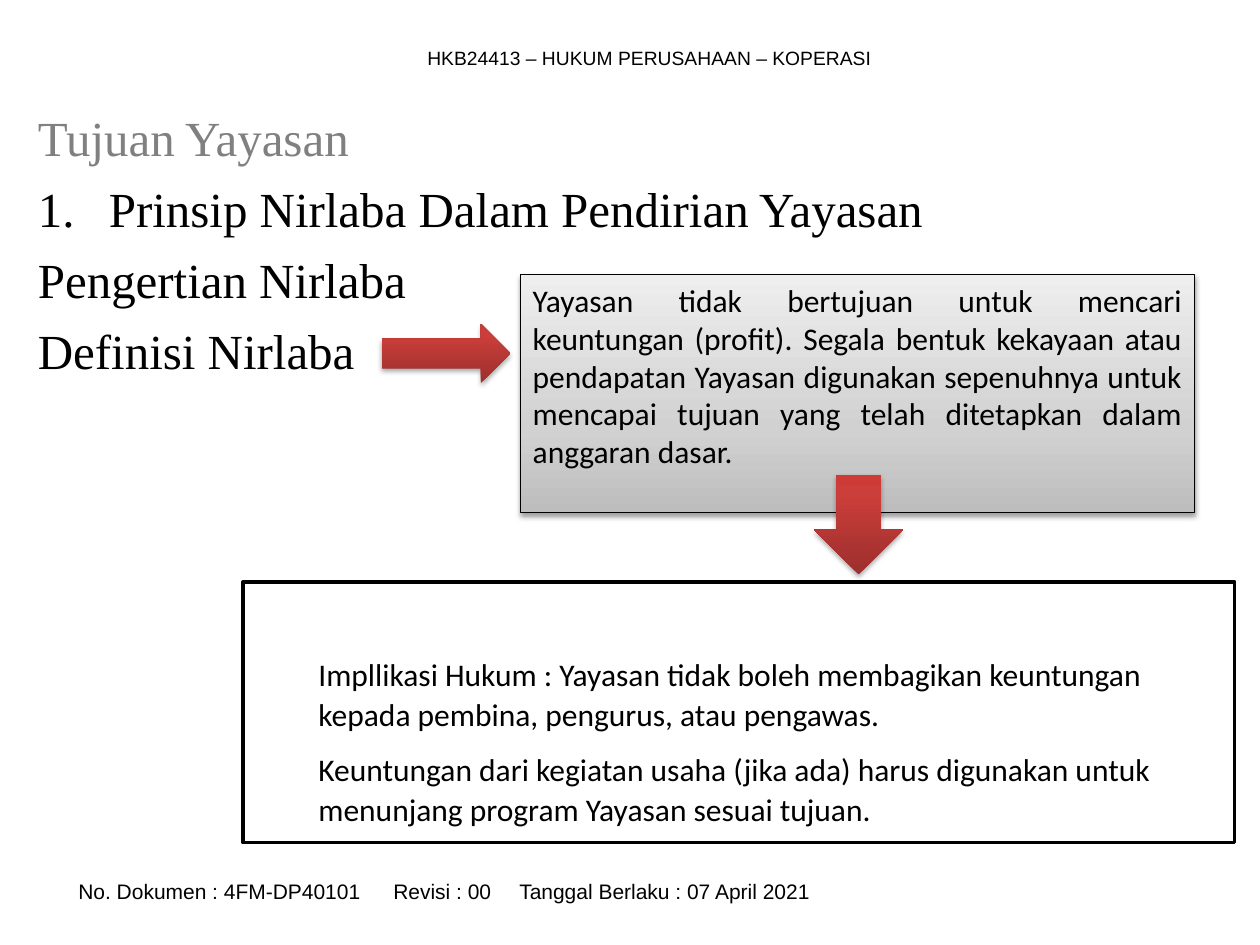
"""Build the slide on the non-profit principle of a foundation (Yayasan)."""
from lxml import etree
from pptx import Presentation
from pptx import util as u
from pptx.dml.color import RGBColor
from pptx.enum import shapes, text
from pptx.oxml.ns import qn

BLACK = RGBColor(0x00, 0x00, 0x00)
WHITE = RGBColor(0xFF, 0xFF, 0xFF)
GREY = RGBColor(0x80, 0x80, 0x80)
RED_STOPS = [
    (0, RGBColor(0x9C, 0x2F, 0x2D)),
    (80, RGBColor(0xCB, 0x3E, 0x3A)),
    (100, RGBColor(0xCE, 0x3B, 0x37)),
]
SILVER_STOPS = [
    (0, RGBColor(0xBD, 0xBD, 0xBD)),
    (35, RGBColor(0xD1, 0xD1, 0xD1)),
    (100, RGBColor(0xEE, 0xEE, 0xEE)),
]
LEFT, CENTER, JUSTIFY = text.PP_ALIGN.LEFT, text.PP_ALIGN.CENTER, text.PP_ALIGN.JUSTIFY
SHAPE = shapes.MSO_SHAPE


def add_text(frame, words, size=18, font="Calibri", color=BLACK, align=JUSTIFY,
             before=0, after=0, spacing=1.0, margin=0, indent=0, numbered=False, tabs=()):
    paragraph = frame.paragraphs[0]
    if paragraph.runs:
        paragraph = frame.add_paragraph()
    properties = paragraph._p.get_or_add_pPr()
    properties.set("marL", str(u.Cm(margin)))
    properties.set("indent", str(u.Cm(indent)))
    if numbered:
        etree.SubElement(properties, qn("a:buFont"), typeface="+mj-lt")
        etree.SubElement(properties, qn("a:buAutoNum"), type="arabicPeriod")
    if tabs:
        tab_list = etree.SubElement(properties, qn("a:tabLst"))
        for position in tabs:
            etree.SubElement(tab_list, qn("a:tab"), pos=str(u.Cm(position)), algn="l")
    paragraph.alignment = align
    paragraph.line_spacing = spacing
    paragraph.space_before, paragraph.space_after = u.Pt(before), u.Pt(after)
    run = paragraph.add_run()
    run.text = words
    run.font.size, run.font.name = u.Pt(size), font
    run.font.color.rgb = color


def add_gradient_and_shadow(shape, stops, opacity, distance):
    shape.fill.gradient()
    shape.fill.gradient_angle = 90
    stop_list = shape.element.spPr.find(qn("a:gradFill")).find(qn("a:gsLst"))
    for stop in list(stop_list):
        stop_list.remove(stop)
    for position, color in stops:
        stop = etree.SubElement(stop_list, qn("a:gs"), pos=str(position * 1000))
        etree.SubElement(stop, qn("a:srgbClr"), val=str(color))
    effects = shape.element.spPr.find(qn("a:effectLst"))
    shadow = etree.SubElement(effects, qn("a:outerShdw"), blurRad=str(u.Pt(3.1)),
                              dist=str(u.Pt(distance)), dir="5400000", rotWithShape="0")
    shadow_color = etree.SubElement(shadow, qn("a:srgbClr"), val=str(BLACK))
    etree.SubElement(shadow_color, qn("a:alpha"), val=str(opacity * 1000))


presentation = Presentation()
presentation.slide_width, presentation.slide_height = u.Cm(25.4), u.Cm(19.05)
slide = presentation.slides.add_slide(presentation.slide_layouts[0])
title = slide.shapes.title
title.element.getparent().remove(title.element)

header = slide.shapes.add_textbox(u.Cm(2.49), u.Cm(0.79), u.Cm(21.21), u.Cm(0.74))
footer = slide.shapes.add_textbox(u.Cm(0.51), u.Cm(17.58), u.Cm(24), u.Cm(0.76))
for box in (header, footer):
    box.text_frame.word_wrap = True
    box.text_frame.vertical_anchor = text.MSO_ANCHOR.MIDDLE
add_text(header.text_frame, "HKB24413 – HUKUM PERUSAHAAN – KOPERASI",
         size=11, font="Arial", align=CENTER)
footer.text_frame.margin_left = u.Cm(1.07)
add_text(footer.text_frame,
         "No. Dokumen : 4FM-DP40101\tRevisi : 00\tTanggal Berlaku : 07 April 2021",
         size=12, font="Arial", align=LEFT, tabs=(9.22, 15.54))

body = slide.placeholders[1]
body.left, body.top, body.width, body.height = u.Cm(0.51), u.Cm(1.93), u.Cm(23.8), u.Cm(15.19)
body.text_frame.auto_size = text.MSO_AUTO_SIZE.NONE
body.text_frame.margin_top = u.Cm(0.23)
body_style = {"size": 28, "font": "Times New Roman"}
add_text(body.text_frame, "Tujuan Yayasan", color=GREY, **body_style)
add_text(body.text_frame, "Prinsip Nirlaba Dalam Pendirian Yayasan",
         before=7, margin=1.43, indent=-1.43, numbered=True, **body_style)
for heading in ("Pengertian Nirlaba", "Definisi Nirlaba"):
    add_text(body.text_frame, heading, before=7, **body_style)

right_arrow, definition, down_arrow, implication = [
    slide.shapes.add_shape(kind, u.Cm(left), u.Cm(top), u.Cm(width), u.Cm(height))
    for kind, left, top, width, height in (
        (SHAPE.RIGHT_ARROW, 7.7, 6.53, 2.59, 1.19),
        (SHAPE.RECTANGLE, 10.49, 5.54, 13.59, 4.8),
        (SHAPE.DOWN_ARROW, 16.41, 9.58, 1.8, 2),
        (SHAPE.RECTANGLE, 4.9, 11.73, 19.99, 5.26),
    )
]
for shape in (right_arrow, definition, down_arrow, implication):
    shape.shadow.inherit = False
for arrow in (right_arrow, down_arrow):
    add_gradient_and_shadow(arrow, RED_STOPS, opacity=35, distance=1.8)
    arrow.line.fill.background()
add_gradient_and_shadow(definition, SILVER_STOPS, opacity=38, distance=1.6)
implication.fill.solid()
implication.fill.fore_color.rgb = WHITE
for rectangle, line_width, anchor in (
    (definition, 0.75, text.MSO_ANCHOR.TOP),
    (implication, 2, text.MSO_ANCHOR.BOTTOM),
):
    rectangle.line.color.rgb = BLACK
    rectangle.line.width = u.Pt(line_width)
    rectangle.text_frame.word_wrap = True
    rectangle.text_frame.vertical_anchor = anchor

add_text(definition.text_frame,
         "Yayasan tidak bertujuan untuk mencari keuntungan (profit). Segala bentuk kekayaan "
         "atau pendapatan Yayasan digunakan sepenuhnya untuk mencapai tujuan yang telah "
         "ditetapkan dalam anggaran dasar.")
implication.text_frame.margin_bottom = u.Cm(0.3)
for sentence, after in (
    ("Impllikasi Hukum : Yayasan tidak boleh membagikan keuntungan kepada pembina, "
     "pengurus, atau pengawas.", 8),
    ("Keuntungan dari kegiatan usaha (jika ada) harus digunakan untuk menunjang "
     "program Yayasan sesuai tujuan.", 0),
):
    add_text(implication.text_frame, sentence, align=LEFT, margin=1.27, spacing=1.07, after=after)

presentation.save("out.pptx")
